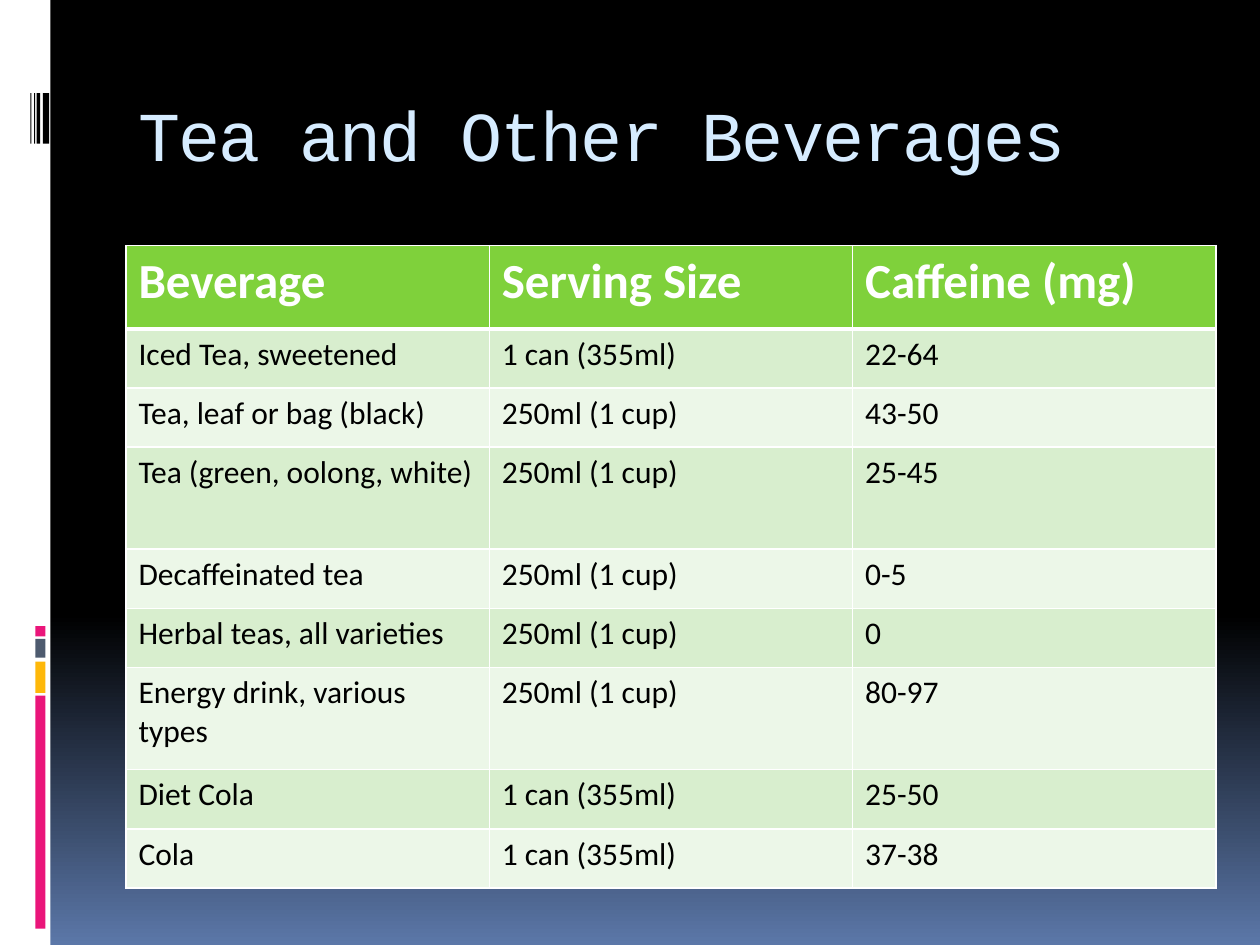
from copy import deepcopy
from typing import NamedTuple

from lxml import etree
from pptx import Presentation
from pptx.dml.color import RGBColor
from pptx.enum.shapes import MSO_SHAPE
from pptx.enum.text import MSO_ANCHOR
from pptx.oxml.ns import qn
from pptx.util import Inches, Pt

RECTANGLE = MSO_SHAPE.RECTANGLE
MIDDLE = MSO_ANCHOR.MIDDLE

COLORS = {
    "white": "FFFFFF", "black": "000000", "pink": "EA157A", "amber": "FEB80A",
    "slate": "4E5B6F", "dusk": "5B77A8", "title": "D6ECFF",
    "header": "7FD13B", "odd": "D8EECE", "even": "ECF7E8",
}
TITLE_FORMAT = {"size": Pt(40), "name": "Courier New"}
HEADER_FORMAT = {"size": Pt(28), "name": "Calibri", "bold": True}
BODY_FORMAT = {"size": Pt(18), "name": "Calibri", "bold": False}


class Bar(NamedTuple):
    left: float
    top: float
    width: float
    height: float
    color: str


class Beverage(NamedTuple):
    name: str
    serving: str
    caffeine: str
    height: float = 0.47


CAN, CUP = "1 can (355ml)", "250ml (1 cup)"
HEADER = Beverage("Beverage", "Serving Size", "Caffeine (mg)", 0.66)
BEVERAGES = [
    Beverage("Iced Tea, sweetened", CAN, "22-64"),
    Beverage("Tea, leaf or bag (black)", CUP, "43-50"),
    Beverage("Tea (green, oolong, white)", CUP, "25-45", 0.81),
    Beverage("Decaffeinated tea", CUP, "0-5"),
    Beverage("Herbal teas, all varieties", CUP, "0"),
    Beverage("Energy drink, various types", CUP, "80-97", 0.81),
    Beverage("Diet Cola", CAN, "25-50"),
    Beverage("Cola", CAN, "37-38"),
]

SIDE_PANEL = Bar(0, 0, 0.4, 7.5, "white")
COLOR_BARS = [
    Bar(0.28, top, 0.08, height, color)
    for top, height, color in [
        (5.52, 1.85, "pink"), (5.25, 0.25, "amber"),
        (5.07, 0.15, "slate"), (4.97, 0.08, "pink"),
    ]
]
BLACK_STRIPES = [
    Bar(left, 0.74, width, 0.4, "black")
    for left, width in [(0.34, 0.05), (0.29, 0.03), (0.27, 0.01), (0.24, 0.01)]
]


def rgb(color: str) -> RGBColor:
    return RGBColor.from_string(COLORS[color])


def set_background(slide) -> None:
    fill = slide.background.fill
    fill.gradient()
    fill.gradient_angle = 270
    stop_list = slide.element.find(".//" + qn("a:gsLst"))
    stop_list.append(deepcopy(stop_list[-1]))
    stops = [(0, "black"), (0.65, "black"), (1, "dusk")]
    for stop, (position, color) in zip(fill.gradient_stops, stops):
        stop.position = position
        stop.color.rgb = rgb(color)


def add_bar(slide, bar: Bar) -> None:
    shape = slide.shapes.add_shape(RECTANGLE, *(Inches(length) for length in bar[:4]))
    shape.shadow.inherit = False
    shape.fill.solid()
    shape.fill.fore_color.rgb = rgb(bar.color)
    shape.line.fill.background()


def write(text_frame, text: str, color: str, font_format: dict):
    run = text_frame.paragraphs[0].add_run()
    run.text = text
    run.font.color.rgb = rgb(color)
    for name, value in font_format.items():
        setattr(run.font, name, value)
    return run


def add_title(slide, text: str) -> None:
    box = slide.shapes.add_textbox(Inches(1), Inches(0.56), Inches(8.5), Inches(1))
    box.text_frame.word_wrap = True
    box.text_frame.vertical_anchor = MIDDLE
    run = write(box.text_frame, text, "title", TITLE_FORMAT)
    run.font._element.set("spc", "-100")


def add_borders(cell, top: int, bottom: int) -> None:
    properties = cell._tc.get_or_add_tcPr()
    for side, points in {"L": 1, "R": 1, "T": top, "B": bottom}.items():
        line = etree.SubElement(properties, qn(f"a:ln{side}"), w=str(Pt(points)))
        fill = etree.SubElement(line, qn("a:solidFill"))
        etree.SubElement(fill, qn("a:srgbClr"), val=COLORS["white"])


def add_beverage_table(slide) -> None:
    rows = [HEADER, *BEVERAGES]
    table = slide.shapes.add_table(
        len(rows), 3, Inches(1), Inches(1.95), Inches(8.65),
        Inches(sum(row.height for row in rows)),
    ).table
    for index, beverage in enumerate(rows):
        table.rows[index].height = Inches(beverage.height)
        is_header = index == 0
        fill_color = "header" if is_header else "odd" if index % 2 else "even"
        text_color = "white" if is_header else "black"
        font_format = HEADER_FORMAT if is_header else BODY_FORMAT
        for cell, text in zip(table.rows[index].cells, beverage[:3]):
            # A thick rule separates the header from the body
            add_borders(cell, top=3 if index == 1 else 1, bottom=3 if is_header else 1)
            cell.fill.solid()
            cell.fill.fore_color.rgb = rgb(fill_color)
            write(cell.text_frame, text, text_color, font_format)


def main() -> None:
    presentation = Presentation()
    presentation.slide_width = Inches(10)
    presentation.slide_height = Inches(7.5)
    slide = presentation.slides.add_slide(presentation.slide_layouts[6])

    # Background and side decoration
    set_background(slide)
    for bar in [SIDE_PANEL, *COLOR_BARS, *BLACK_STRIPES]:
        add_bar(slide, bar)

    # Content
    add_title(slide, "Tea and Other Beverages")
    add_beverage_table(slide)

    presentation.save("out.pptx")


if __name__ == "__main__":
    main()
